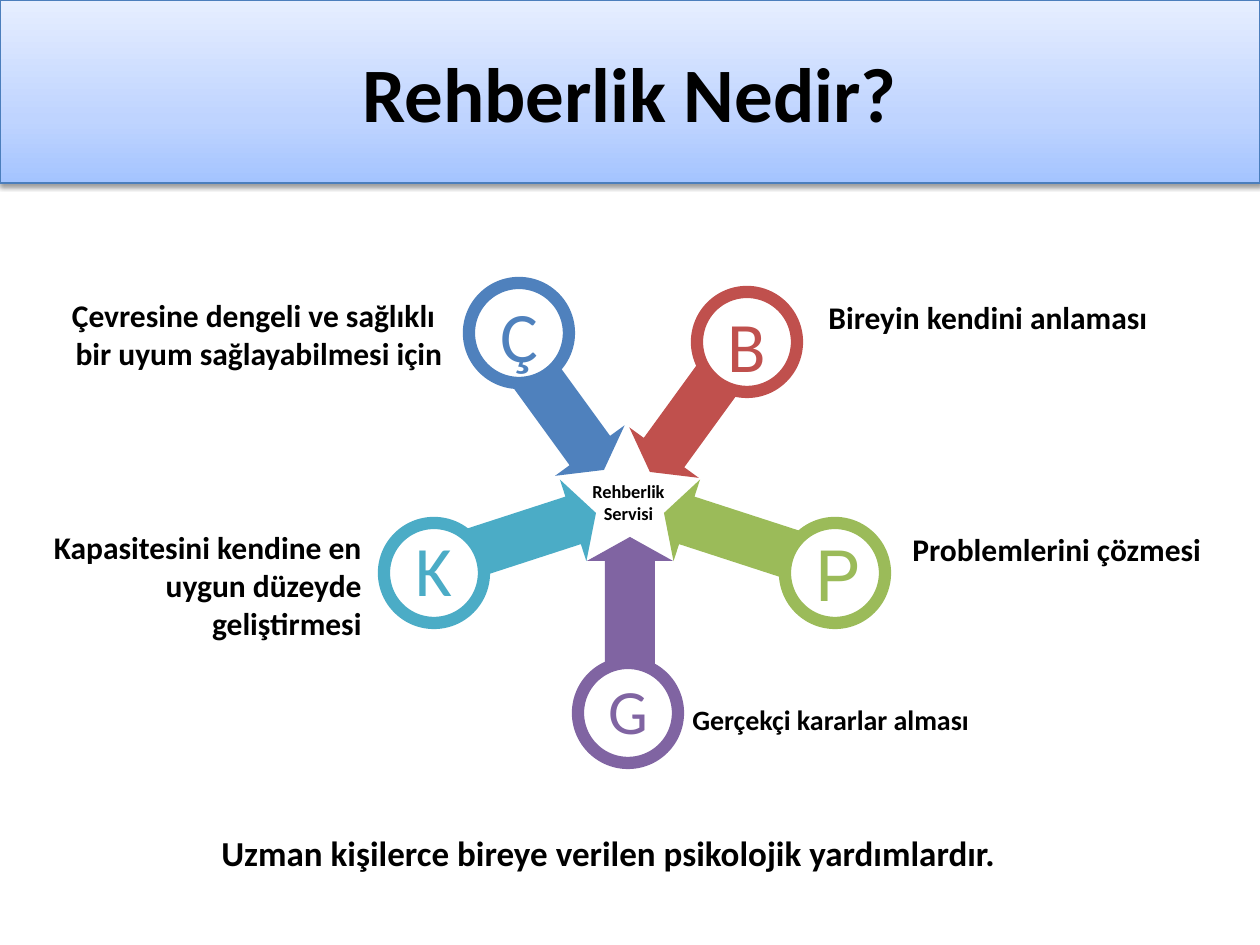
import copy
import math

import lxml.etree
import pptx
import pptx.dml.color
import pptx.enum.shapes
import pptx.enum.text
import pptx.oxml
import pptx.oxml.ns
import pptx.util

SCALE = 914400 / 126
ALIGN = pptx.enum.text.PP_ALIGN
ANCHOR = pptx.enum.text.MSO_ANCHOR
SHAPE = pptx.enum.shapes.MSO_SHAPE
RING_SIZE = 100

SPOKES = [
    ("G", "8064A2", (630, 537), (578, 663), (604, 685), {"size": 36}),
    ("P", "9BBB59", (664, 513), (785, 523), (814, 549), {"font": "Roboto"}),
    ("B", "C0504D", (650, 472), (697, 292), (723, 320), {}),
    ("Ç", "4F81BD", (604, 470), (469, 283), (495, 310), {}),
    ("K", "4BACC6", (596, 513), (384, 523), (410, 544), {}),
]

CAPTIONS = [
    ((573, 474, 111, 57), ["Rehberlik", "Servisi"],
     {"size": 10.5, "align": ALIGN.CENTER}),
    ((816, 292, 346, 50), ["Bireyin kendini anlaması"], {}),
    ((900, 524, 316, 50), ["Problemlerini çözmesi"], {}),
    ((680, 696, 304, 47), ["Gerçekçi kararlar alması"], {"size": 16}),
    ((30, 522, 344, 127), ["Kapasitesini kendine en uygun düzeyde geliştirmesi"],
     {"align": ALIGN.RIGHT, "wrap": True}),
    ((49, 290, 406, 89),
     ["Çevresine dengeli ve sağlıklı ", "bir uyum sağlayabilmesi için"],
     {"align": ALIGN.RIGHT, "wrap": True}),
    ((209, 825, 951, 55), ["Uzman kişilerce bireye verilen psikolojik yardımlardır."],
     {"size": 20, "wrap": True}),
]


def emu(*lengths):
    return [round(length * SCALE) for length in lengths]


def paint(color_format, color):
    color_format.rgb = pptx.dml.color.RGBColor.from_string(color)


def fill_solid(shape, color):
    shape.shadow.inherit = False
    shape.fill.solid()
    paint(shape.fill.fore_color, color)


def write_text(frame, lines, size=18, font="Calibri", color="000000", bold=True,
               align=ALIGN.LEFT, anchor=ANCHOR.TOP, wrap=False):
    frame.word_wrap = wrap
    frame.vertical_anchor = anchor
    for index, line in enumerate(lines):
        para = frame.add_paragraph() if index else frame.paragraphs[0]
        para.alignment = align
        span = para.add_run()
        span.text = line
        span.font.size = pptx.util.Pt(size)
        span.font.name = font
        span.font.bold = bold
        paint(span.font.color, color)


def add_header(page, box, title):
    banner = page.shapes.add_shape(SHAPE.RECTANGLE, *emu(*box))
    banner.shadow.inherit = False
    banner.fill.gradient()
    banner.fill.gradient_angle = 90
    first, last = banner.fill.gradient_stops
    for stop, color in ((first, "A4C4FF"), (last, "E6EEFF")):
        paint(stop.color, color)
    stops = banner.element.spPr.find(".//" + pptx.oxml.ns.qn("a:gsLst"))
    stops.insert(1, copy.deepcopy(stops[0]))
    middle = banner.fill.gradient_stops[1]
    middle.position = 0.35
    paint(middle.color, "BFD4FF")
    paint(banner.line.color, "4B7EBC")
    banner.line.width = pptx.util.Pt(0.75)
    effects = banner.element.spPr.find(pptx.oxml.ns.qn("a:effectLst"))
    shadow = lxml.etree.SubElement(
        effects, pptx.oxml.ns.qn("a:outerShdw"), blurRad="39400", dist="20300",
        dir="5400000", rotWithShape="0")
    tint = lxml.etree.SubElement(shadow, pptx.oxml.ns.qn("a:srgbClr"), val="000000")
    lxml.etree.SubElement(tint, pptx.oxml.ns.qn("a:alpha"), val="38000")
    write_text(banner.text_frame, [title], size=44, align=ALIGN.CENTER,
               anchor=ANCHOR.MIDDLE, wrap=True)


def add_arrow(page, tip, angle, color, length=165, head=24, head_half=43, shaft_half=25):
    outline = [(0, 0), (head, head_half), (head, shaft_half), (length, shaft_half),
               (length, -shaft_half), (head, -shaft_half), (head, -head_half)]
    cos, sin = math.cos(math.radians(angle)), math.sin(math.radians(angle))
    points = [emu(tip[0] + along * cos - across * sin, tip[1] + along * sin + across * cos)
              for along, across in outline]
    builder = page.shapes.build_freeform(*points[0])
    builder.add_line_segments(points[1:], close=True)
    arrow = builder.convert_to_shape()
    fill_solid(arrow, color)
    arrow.line.fill.background()


def add_badge(page, ring_at, letter_at, letter, color, **letter_format):
    group = page.shapes.add_group_shape()
    ring = group.shapes.add_shape(SHAPE.OVAL, *emu(*ring_at, RING_SIZE, RING_SIZE))
    fill_solid(ring, "FFFFFF")
    paint(ring.line.color, color)
    ring.line.width = pptx.util.Pt(7)
    label = group.shapes.add_textbox(*emu(*letter_at, 48, 48))
    frame = label.text_frame
    frame.margin_left = frame.margin_right = frame.margin_top = frame.margin_bottom = 0
    write_text(frame, [letter], color=color, bold=False, align=ALIGN.CENTER,
               anchor=ANCHOR.MIDDLE, **{"size": 40.5, **letter_format})


def add_caption(page, box, lines, **text_format):
    caption = page.shapes.add_textbox(*emu(*box))
    caption.text_frame.auto_size = pptx.enum.text.MSO_AUTO_SIZE.SHAPE_TO_FIT_TEXT
    write_text(caption.text_frame, lines, **text_format)


def main():
    deck = pptx.Presentation()
    deck.slide_width, deck.slide_height = emu(1260, 945)
    page = deck.slides.add_slide(deck.slide_layouts[6])
    add_header(page, (0, 0, 1260, 183), "Rehberlik Nedir?")
    for index, (_, color, tip, *_) in enumerate(SPOKES):
        add_arrow(page, tip, 90 - 72 * index, color)
    for box, lines, text_format in CAPTIONS:
        add_caption(page, box, lines, **text_format)
    for letter, color, _, ring_at, letter_at, letter_format in SPOKES:
        add_badge(page, ring_at, letter_at, letter, color, **letter_format)
    deck.save("out.pptx")


if __name__ == "__main__":
    main()
